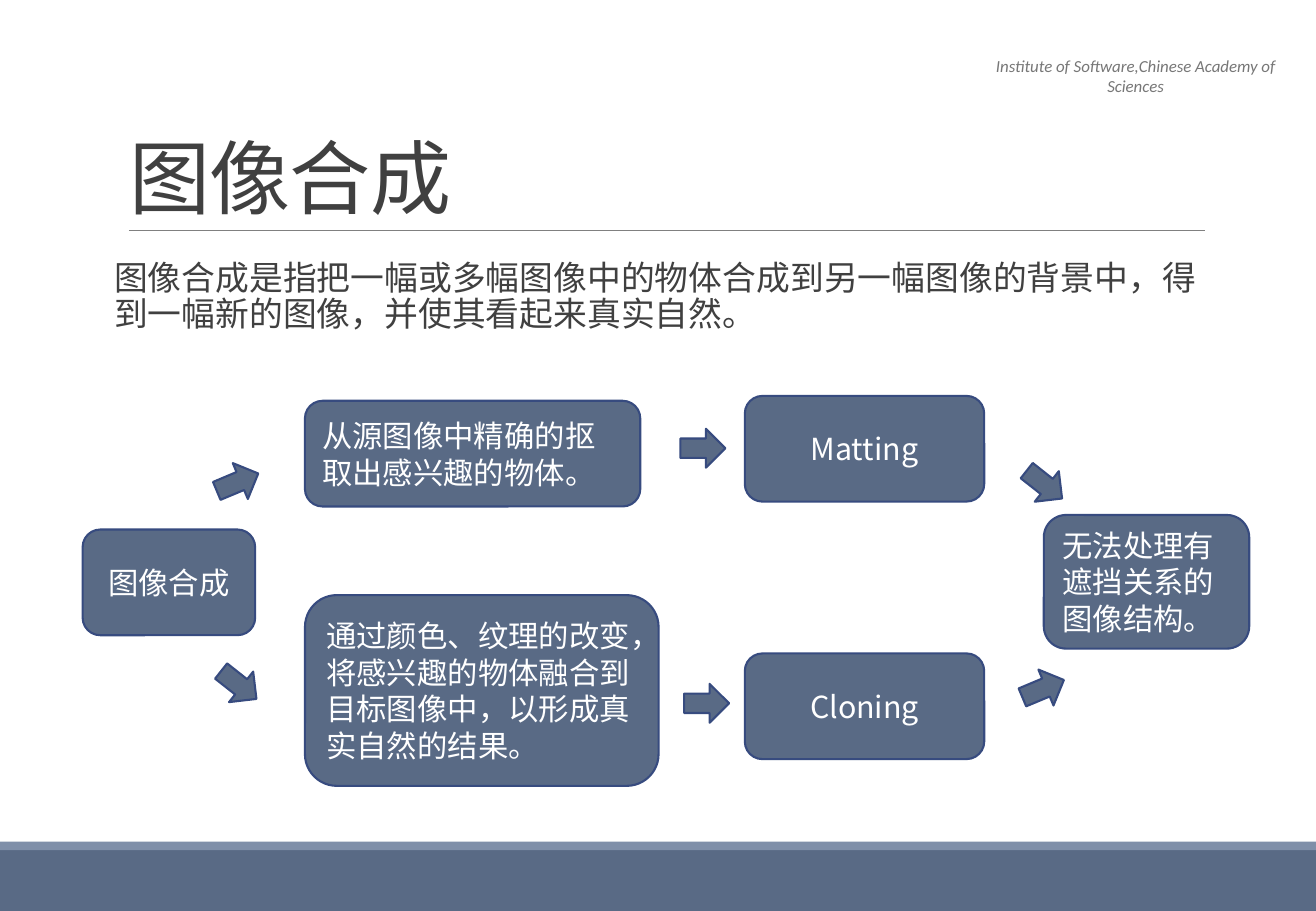
from lxml.etree import SubElement
from pptx import Presentation
from pptx.dml.color import RGBColor
from pptx.enum.shapes import MSO_CONNECTOR as Connector, MSO_SHAPE as Shape
from pptx.enum.text import MSO_ANCHOR as Anchor, PP_ALIGN as Align
from pptx.oxml.ns import qn
from pptx.util import Inches, Pt

COLORS = {
    "slate": "596A85", "band": "7F8FA9", "outline": "374B7F", "rule": "808080",
    "header": "777777", "text": "404040", "white": "FFFFFF",
}
CJK_FONT = "Noto Sans CJK SC"

deck = Presentation()
deck.slide_width, deck.slide_height = Inches(10.83), Inches(7.5)
page = deck.slides.add_slide(deck.slide_layouts[6])


def add_block(kind, left, top, width, height, fill, outline=None):
    block = page.shapes.add_shape(
        kind, Inches(left), Inches(top), Inches(width), Inches(height))
    block.shadow.inherit = False
    block.fill.solid()
    block.fill.fore_color.rgb = RGBColor.from_string(COLORS[fill])
    if outline:
        block.line.color.rgb = RGBColor.from_string(COLORS[outline])
        block.line.width = Pt(1.25)
    else:
        block.line.fill.background()
    return block


def write_text(box, text, size, color, align=Align.LEFT, anchor=Anchor.TOP, font=CJK_FONT):
    frame = box.text_frame
    frame.word_wrap = True
    frame.vertical_anchor = anchor
    para = frame.paragraphs[0]
    para.text = text
    para.alignment = align
    span = para.runs[0]
    span.font.size = Pt(size)
    span.font.name = font
    span.font.color.rgb = RGBColor.from_string(COLORS[color])
    SubElement(span.font._element, qn("a:ea"), typeface=font)
    return para


# Footer bands
add_block(Shape.RECTANGLE, 0, 7, 10.83, 0.5, "slate")
add_block(Shape.RECTANGLE, 0, 6.93, 10.83, 0.07, "band")

# Rule under the title
rule = page.shapes.add_connector(
    Connector.STRAIGHT, Inches(1.06), Inches(1.9), Inches(9.92), Inches(1.9))
rule.line.color.rgb = RGBColor.from_string(COLORS["rule"])
rule.line.width = Pt(0.5)
SubElement(rule._element.spPr, qn("a:effectLst"))

# Header, title and definition
header = page.shapes.add_textbox(Inches(8.04), Inches(0.41), Inches(2.61), Inches(0.27))
para = write_text(header, "Institute of Software,Chinese Academy of Sciences",
                  10, "header", Align.CENTER, font="Calibri")
para.runs[0].font.italic = True

title = page.shapes.add_textbox(Inches(0.97), Inches(0.31), Inches(8.94), Inches(1.59))
para = write_text(title, "图像合成", 48, "text", anchor=Anchor.BOTTOM)
para.line_spacing = 0.85
para.runs[0].font._element.set("spc", "-50")

definition = page.shapes.add_textbox(Inches(0.84), Inches(2.1), Inches(9.21), Inches(0.98))
definition.text_frame.margin_right = 0
para = write_text(
    definition,
    "图像合成是指把一幅或多幅图像中的物体合成到另一幅图像的背景中，得到一幅新的图像，并使其看起来真实自然。",
    20, "text")
para.line_spacing = 0.9

# Steps of the flow
steps = [
    ("图像合成", 0.68, 4.36, 1.42, 0.87, Align.CENTER),
    ("通过颜色、纹理的改变，将感兴趣的物体融合到目标图像中，以形成真实自然的结果。",
     2.51, 4.9, 2.91, 1.57, Align.LEFT),
    ("从源图像中精确的抠取出感兴趣的物体。", 2.51, 3.3, 2.76, 0.87, Align.LEFT),
    ("Matting", 6.13, 3.26, 1.97, 0.87, Align.CENTER),
    ("Cloning", 6.13, 5.38, 1.97, 0.87, Align.CENTER),
    ("无法处理有遮挡关系的图像结构。", 8.59, 4.24, 1.69, 1.1, Align.LEFT),
]
for text, left, top, width, height, align in steps:
    step = add_block(Shape.ROUNDED_RECTANGLE, left, top, width, height, "slate", "outline")
    write_text(step, text, 18, "white", align, Anchor.MIDDLE)

# Arrows between the steps
LEVEL, DOWN, UP = 0, 38.3, 337.2
arrows = [
    (5.6, 3.53, LEVEL), (5.63, 5.63, LEVEL),
    (1.78, 5.48, DOWN), (1.77, 3.81, UP),
    (8.4, 5.51, UP), (8.41, 3.83, DOWN),
]
for left, top, angle in arrows:
    arrow = add_block(Shape.RIGHT_ARROW, left, top, 0.37, 0.32, "slate", "outline")
    arrow.rotation = angle

deck.save("out.pptx")
